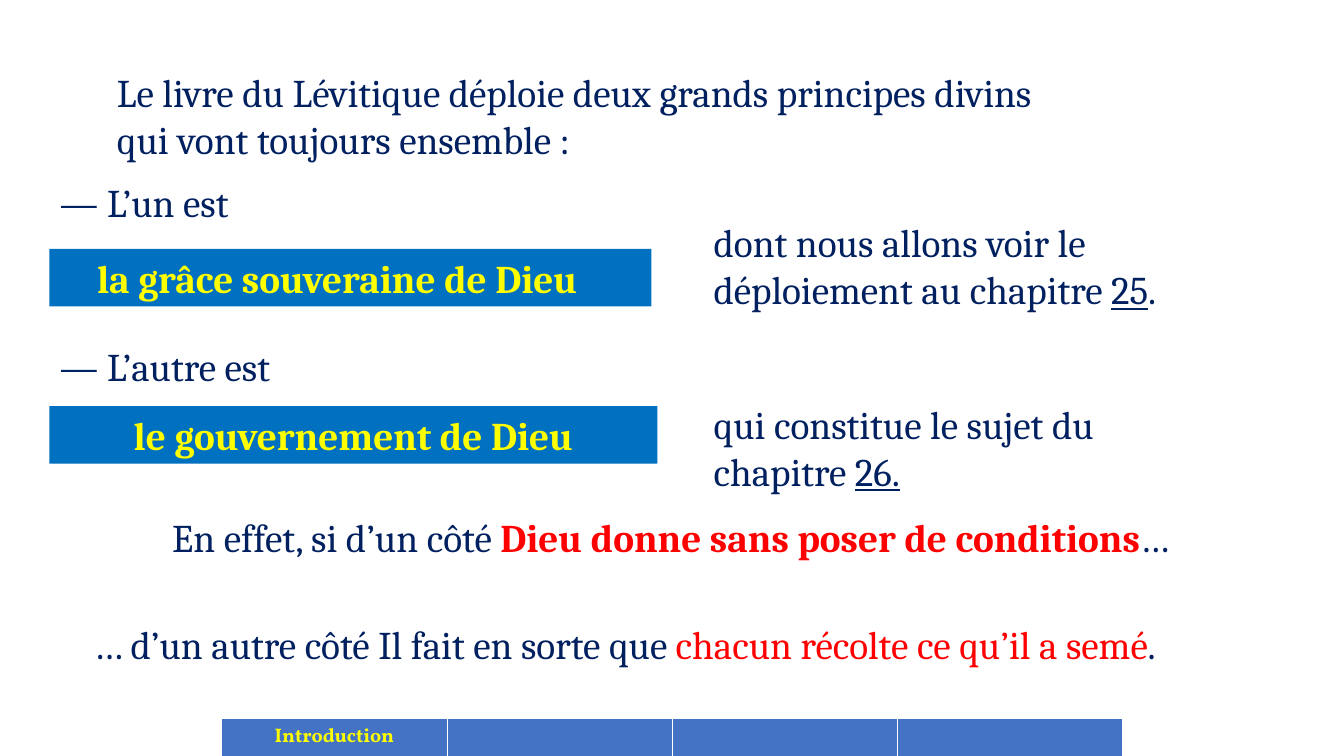
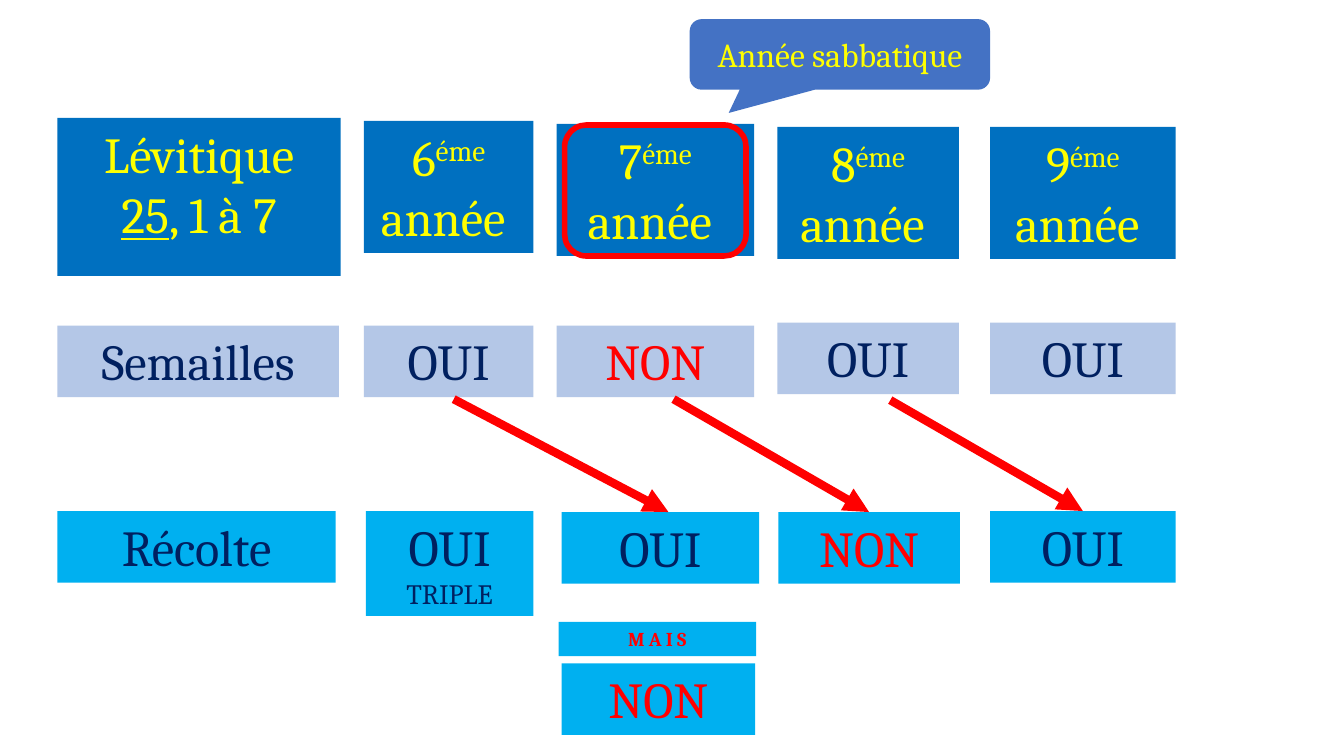
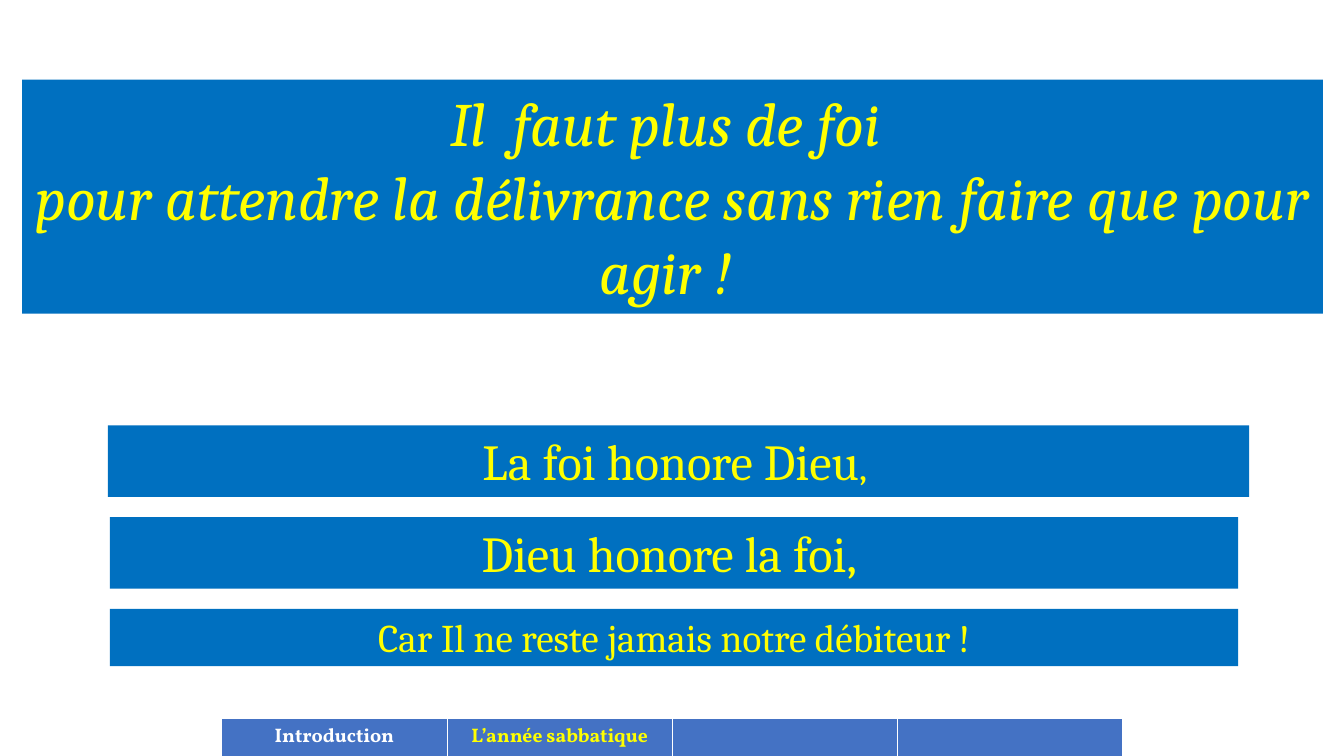
from dataclasses import dataclass

from lxml.etree import SubElement
from pptx import Presentation
from pptx.dml.color import RGBColor
from pptx.enum.shapes import MSO_CONNECTOR, MSO_SHAPE
from pptx.enum.text import MSO_ANCHOR, MSO_AUTO_SIZE, PP_ALIGN
from pptx.oxml.ns import qn
from pptx.shapes.autoshape import Shape
from pptx.slide import Slide
from pptx.util import Inches, Pt

HUES = {
    "navy": "002060",
    "red": "FF0000",
    "yellow": "FFFF00",
    "white": "FFFFFF",
    "blue": "0070C0",
    "pale": "B4C7E7",
    "sky": "00B0F0",
    "steel": "4472C4",
}
FONT = "Cambria"
TABS = 4

Spot = tuple[float, float, float, float]


@dataclass
class Span:
    text: str
    form: dict


Line = list[Span]


@dataclass
class Note:
    """A plain text box."""
    at: Spot
    lines: list[Line]
    align: PP_ALIGN = PP_ALIGN.LEFT


@dataclass
class Band:
    """A filled box with centred text."""
    at: Spot
    fill: str
    lines: list[Line]
    right: float = 0.1


@dataclass
class Year:
    """A column of the harvest chart."""
    rank: str
    head: Spot
    sow_top: float
    sow: str
    reap_at: Spot
    reap: str


@dataclass
class Arrow:
    start: tuple[float, float]
    end: tuple[float, float]
    goal: Shape | None = None


def span(text: str, **form) -> Span:
    return Span(text, form)


def tint(name: str) -> RGBColor:
    return RGBColor.from_string(HUES[name])


def write(para, text: str, *, size: int = 28, hue: str = "navy", font: str = FONT,
          bold: bool = False, slant: bool = False, under: bool = False,
          raised: bool = False, track: int = 0) -> None:
    run = para.add_run()
    run.text = text
    face = run.font
    face.name, face.size, face.color.rgb = font, Pt(size), tint(hue)
    face.bold, face.italic, face.underline = bold, slant, under
    props = run._r.get_or_add_rPr()
    if raised:
        props.set("baseline", "30000")
    if track:
        props.set("spc", str(track * 100))


def fill_text(shape: Shape, lines: list[Line], align: PP_ALIGN, right: float = 0.1) -> None:
    frame = shape.text_frame
    frame.word_wrap = True
    frame.auto_size = MSO_AUTO_SIZE.SHAPE_TO_FIT_TEXT
    frame.vertical_anchor = MSO_ANCHOR.TOP
    frame.margin_right = Inches(right)
    for i, line in enumerate(lines):
        para = frame.add_paragraph() if i else frame.paragraphs[0]
        para.alignment = align
        for part in line:
            write(para, part.text, **part.form)


def paint(shape: Shape, hue: str) -> None:
    shape.shadow.inherit = False
    shape.fill.solid()
    shape.fill.fore_color.rgb = tint(hue)
    shape.line.fill.background()


def place(shape: Shape, at: Spot) -> None:
    shape.left, shape.top, shape.width, shape.height = map(Inches, at)


def add_note(slide: Slide, note: Note) -> None:
    box = slide.shapes.add_textbox(*map(Inches, note.at))
    fill_text(box, note.lines, note.align)


def add_band(slide: Slide, band: Band) -> Shape:
    box = slide.shapes.add_shape(MSO_SHAPE.RECTANGLE, *map(Inches, band.at))
    paint(box, band.fill)
    fill_text(box, band.lines, PP_ALIGN.CENTER, band.right)
    return box


def add_title(slide: Slide, at: Spot, lines: list[Line],
              align: PP_ALIGN = PP_ALIGN.CENTER, fill: str = "") -> None:
    title = slide.shapes.title
    place(title, at)
    if fill:
        paint(title, fill)
    fill_text(title, lines, align)


def add_arrow(slide: Slide, arrow: Arrow) -> None:
    ends = map(Inches, (*arrow.start, *arrow.end))
    link = slide.shapes.add_connector(MSO_CONNECTOR.STRAIGHT, *ends)
    link.line.color.rgb = tint("red")
    link.line.width = Pt(6)
    SubElement(link.line._get_or_add_ln(), qn("a:tailEnd"), type="triangle")
    SubElement(link._element.spPr, qn("a:effectLst"))
    if arrow.goal is not None:
        link.end_connect(arrow.goal, 0)


def add_tabs(slide: Slide, names: list[str]) -> None:
    """Draw the progress bar, with the last name lit."""
    spot = map(Inches, (2.2, 7.13, 8.94, 0.37))
    table = slide.shapes.add_table(1, TABS, *spot).table
    for i, cell in enumerate(table.rows[0].cells):
        cell.fill.solid()
        cell.fill.fore_color.rgb = tint("steel")
        if i < len(names):
            para = cell.text_frame.paragraphs[0]
            para.alignment = PP_ALIGN.CENTER
            hue = "yellow" if i == len(names) - 1 else "white"
            write(para, names[i], size=14, hue=hue, font="Vollkorn", bold=True)


def build_law(slide: Slide) -> None:
    add_title(slide, (1.06, 0.63, 10.8, 1.04), [
        [span("Le livre du Lévitique déploie deux grands principes divins")],
        [span("qui vont toujours ensemble :")],
    ], PP_ALIGN.LEFT)
    notes = [
        Note((0.49, 1.72, 5.97, 0.57), [[span("— L’un est")]]),
        Note((0.49, 3.35, 5.87, 0.57), [[span("— L’autre est")]]),
        Note((0.83, 5.04, 11.72, 0.57), [[
            span("En effet, si d’un côté "),
            span("Dieu donne sans poser de conditions", hue="red", bold=True),
            span("… "),
        ]], PP_ALIGN.CENTER),
        Note((6.98, 2.12, 5.1, 1.04), [[
            span("dont nous allons voir le déploiement au chapitre "),
            span("25", under=True),
            span("."),
        ]]),
        Note((6.98, 3.92, 4.44, 1.04), [[
            span("qui constitue le sujet du chapitre "),
            span("26.", under=True),
        ]]),
        Note((0.83, 6.1, 12.11, 0.57), [[
            span("… d’un autre côté Il fait en sorte que "),
            span("chacun récolte ce qu’il a semé", hue="red"),
            span("."),
        ]]),
    ]
    for note in notes:
        add_note(slide, note)
    add_tabs(slide, ["Introduction"])
    gold = {"hue": "yellow", "bold": True}
    add_band(slide, Band((0.49, 2.47, 5.97, 0.57), "blue",
                         [[span("la grâce souveraine de Dieu", **gold)]], 0.36))
    add_band(slide, Band((0.49, 4.03, 6.03, 0.57), "blue",
                         [[span("le gouvernement de Dieu", **gold)]]))


def answer(word: str) -> Line:
    return [span(word, size=36, hue="red" if word == "NON" else "navy")]


def build_year(slide: Slide) -> None:
    gold = {"size": 36, "hue": "yellow"}
    add_title(slide, (0.57, 1.17, 2.81, 1.31), [
        [span("Lévitique", **gold)],
        [span("25", under=True, **gold), span(", 1 à 7", **gold)],
    ], fill="blue")
    add_band(slide, Band((0.57, 3.23, 2.79, 0.71), "pale", [answer("Semailles")]))
    add_band(slide, Band((0.57, 5.07, 2.76, 0.71), "sky", [answer("Récolte")]))

    years = [
        Year("6", (3.61, 1.2, 1.68, 1.31), 3.23, "OUI", (3.63, 5.07, 1.66, 1.04), "OUI"),
        Year("7", (5.52, 1.23, 1.96, 1.31), 3.23, "NON", (5.57, 5.08, 1.96, 0.71), "OUI"),
        Year("8", (7.71, 1.26, 1.8, 1.31), 3.2, "OUI", (7.72, 5.08, 1.8, 0.71), "NON"),
        Year("9", (9.82, 1.26, 1.84, 1.31), 3.2, "OUI", (9.82, 5.07, 1.84, 0.71), "OUI"),
    ]
    crops = {}
    for year in years:
        left, _, wide, _ = year.head
        add_band(slide, Band(year.head, "blue", [[
            span(year.rank, **gold),
            span("éme", raised=True, **gold),
            span(" année ", **gold),
        ]]))
        add_band(slide, Band((left, year.sow_top, wide, 0.71), "pale", [answer(year.sow)]))
        lines = [answer(year.reap)]
        if year.rank == "6":
            lines.append([span("TRIPLE", size=20)])
        crops[year.rank] = add_band(slide, Band(year.reap_at, "sky", lines))

    for arrow in (
        Arrow((4.5, 3.96), (6.63, 5.08)),
        Arrow((6.68, 3.96), (8.62, 5.08), crops["8"]),
        Arrow((8.83, 3.97), (10.74, 5.07), crops["9"]),
    ):
        add_arrow(slide, arrow)

    add_band(slide, Band((5.57, 6.58, 1.92, 0.71), "sky", [answer("NON")]))
    add_band(slide, Band((5.54, 6.17, 1.96, 0.34), "sky",
                         [[span("MAIS", size=14, hue="red", bold=True, track=3)]]))

    ring = slide.shapes.add_shape(MSO_SHAPE.ROUNDED_RECTANGLE,
                                  *map(Inches, (5.6, 1.24, 1.8, 1.3)))
    ring.shadow.inherit = False
    ring.fill.background()
    ring.line.color.rgb = tint("red")
    ring.line.width = Pt(4)

    label = slide.shapes.add_shape(MSO_SHAPE.ROUNDED_RECTANGULAR_CALLOUT,
                                   *map(Inches, (6.84, 0.19, 2.98, 0.7)))
    for i, value in enumerate((-0.37, 0.83, 0.17)):
        label.adjustments[i] = value
    paint(label, "steel")
    fill_text(label, [[span("Année sabbatique", size=24, hue="yellow")]], PP_ALIGN.CENTER)
    label.text_frame.auto_size = MSO_AUTO_SIZE.NONE
    label.text_frame.vertical_anchor = MSO_ANCHOR.MIDDLE


def build_faith(slide: Slide) -> None:
    motto = {"size": 44, "hue": "yellow", "slant": True}
    add_title(slide, (0.22, 0.79, 12.9, 2.32), [
        [span("Il  faut plus de foi ", **motto)],
        [span("pour attendre la délivrance sans rien faire que pour agir ! ", **motto)],
    ], fill="blue")
    gold = {"size": 36, "hue": "yellow"}
    bands = [
        Band((1.07, 4.22, 11.32, 0.71), "blue",
             [[span("La foi honore Dieu", **gold), span(", ", hue="yellow")]]),
        Band((1.09, 5.13, 11.19, 0.71), "blue", [[span("Dieu honore la foi, ", **gold)]]),
        Band((1.09, 6.04, 11.19, 0.57), "blue",
             [[span("Car Il ne reste jamais notre débiteur !", hue="yellow")]]),
    ]
    for band in bands:
        add_band(slide, band)
    add_tabs(slide, ["Introduction", "L’année sabbatique"])


def main() -> None:
    deck = Presentation()
    deck.slide_width, deck.slide_height = Inches(13.33), Inches(7.5)
    for build in (build_law, build_year, build_faith):
        build(deck.slides.add_slide(deck.slide_layouts[5]))
    deck.save("out.pptx")


if __name__ == "__main__":
    main()
